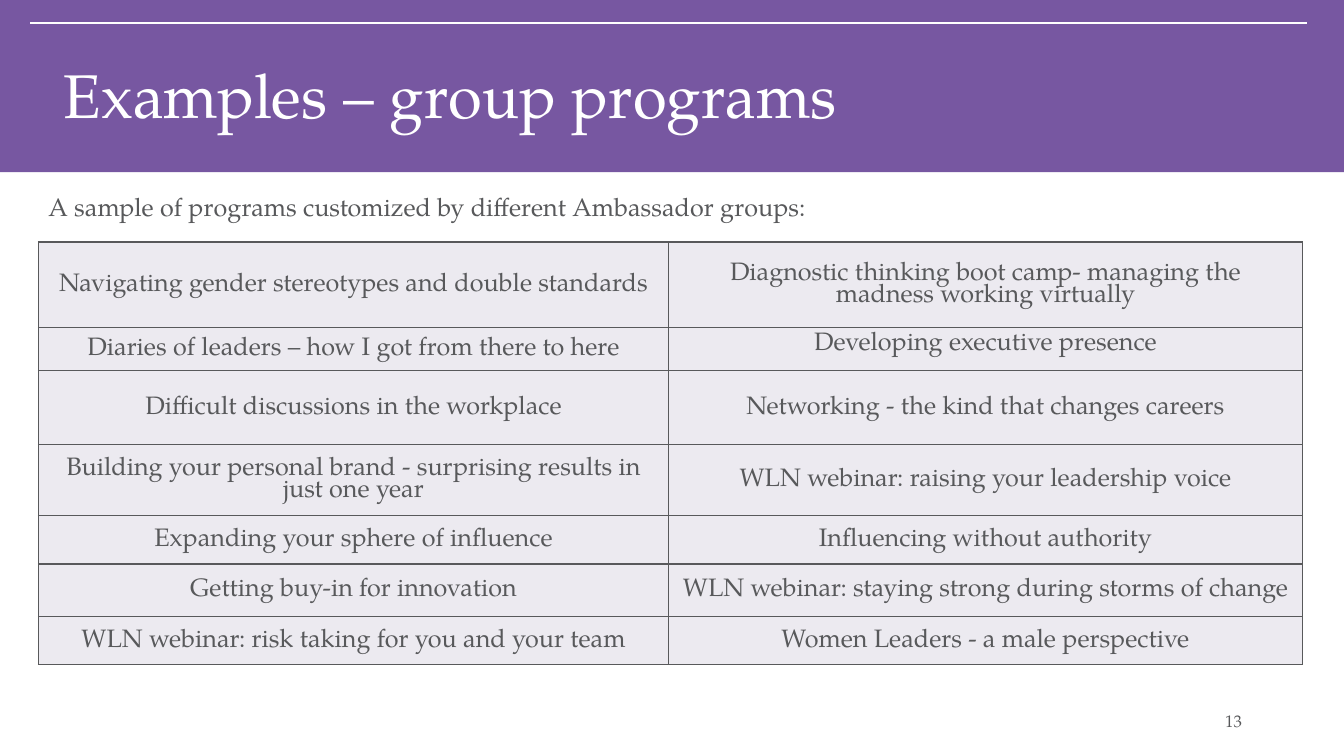
from lxml.etree import SubElement
from pptx import Presentation
from pptx.dml.color import RGBColor
from pptx.enum.shapes import MSO_CONNECTOR as Conn, MSO_SHAPE as Shape
from pptx.enum.text import MSO_ANCHOR as Anchor, PP_ALIGN as Align
from pptx.oxml.ns import qn
from pptx.util import Cm, Pt

FONT = "TeX Gyre Pagella"
PURPLE, WHITE, GRAY, PALE = "7757A1", "FFFFFF", "58595B", "ECEAF0"
COLS = [15.88, 15.97]
ROWS = [2.16, 1.07, 1.88, 1.78, 1.22, 1.32, 1.22]
TOPICS = [
    ("Navigating gender stereotypes and double standards",
     "Diagnostic thinking boot camp- managing the madness working virtually"),
    ("Diaries of leaders – how I got from there to here",
     "Developing executive presence"),
    ("Difficult discussions in the workplace",
     "Networking - the kind that changes careers"),
    ("Building your personal brand - surprising results in just one year",
     "WLN webinar: raising your leadership voice"),
    ("Expanding your sphere of influence", "Influencing without authority"),
    ("Getting buy-in for innovation",
     "WLN webinar: staying strong during storms of change"),
    ("WLN webinar: risk taking for you and your team",
     "Women Leaders - a male perspective"),
]


def rgb(code):
    return RGBColor.from_string(code)


def write(frame, text, size, color=GRAY, align=Align.LEFT):
    frame.text = text
    frame.word_wrap = True
    para = frame.paragraphs[0]
    para.alignment = align
    font = para.font
    font.name, font.size, font.color.rgb = FONT, Pt(size), rgb(color)
    return para


def place(shape, left, top, width, height):
    shape.left, shape.top = Cm(left), Cm(top)
    shape.width, shape.height = Cm(width), Cm(height)


def add_band(shapes):
    band = shapes.add_shape(Shape.RECTANGLE, 0, 0, Cm(33.87), Cm(4.34))
    band.shadow.inherit = False
    band.fill.solid()
    band.fill.fore_color.rgb = rgb(PURPLE)
    band.line.fill.background()
    rule = shapes.add_connector(
        Conn.STRAIGHT, Cm(0.76), Cm(0.58), Cm(32.94), Cm(0.58))
    rule.line.color.rgb = rgb(WHITE)
    rule.line.width = Pt(1.5)
    SubElement(rule.element.spPr, qn("a:effectLst"))
    # The title stays in front of the band.
    for part in (rule, band):
        shapes.element.insert(2, part.element)


def add_title(shapes, text):
    title = shapes.title
    place(title, 1.35, 0.28, 30.2, 3.12)
    write(title.text_frame, text, 44, WHITE)
    title.text_frame.vertical_anchor = Anchor.BOTTOM
    title.text_frame.margin_bottom = Cm(0.1)


def add_text(shapes, text, spot, size, align=Align.LEFT, anchor=Anchor.TOP):
    box = shapes.add_textbox(*map(Cm, spot))
    write(box.text_frame, text, size, align=align)
    box.text_frame.vertical_anchor = anchor


def add_border(cell):
    props = cell._tc.get_or_add_tcPr()
    for at, side in enumerate(("a:lnL", "a:lnR", "a:lnT", "a:lnB")):
        line = props.makeelement(qn(side), {"w": str(Pt(1))})
        fill = SubElement(line, qn("a:solidFill"))
        SubElement(fill, qn("a:srgbClr"), val=GRAY)
        props.insert(at, line)


def add_grid(shapes):
    table = shapes.add_table(
        len(ROWS), len(COLS), Cm(0.97), Cm(6.1),
        Cm(sum(COLS)), Cm(sum(ROWS))).table
    table.first_row = table.horz_banding = False
    for col, width in zip(table.columns, COLS):
        col.width = Cm(width)
    for row, height, topics in zip(table.rows, ROWS, TOPICS):
        row.height = Cm(height)
        for cell, topic in zip(row.cells, topics):
            para = write(cell.text_frame, topic, 18, align=Align.CENTER)
            para.line_spacing = 0.85
            cell.vertical_anchor = Anchor.MIDDLE
            cell.fill.solid()
            cell.fill.fore_color.rgb = rgb(PALE)
            add_border(cell)
    table.cell(1, 1).vertical_anchor = Anchor.TOP


def main():
    deck = Presentation()
    deck.slide_width, deck.slide_height = Cm(33.87), Cm(19.05)
    shapes = deck.slides.add_slide(deck.slide_layouts[5]).shapes
    add_band(shapes)
    add_title(shapes, "Examples – group programs")
    add_text(shapes, "13", (23.93, 17.65, 7.62, 1.02), 12,
             Align.RIGHT, Anchor.MIDDLE)
    add_grid(shapes)
    add_text(shapes,
             "A sample of programs customized by different Ambassador groups:",
             (0.97, 4.7, 29.41, 1.02), 18)
    deck.save("out.pptx")


if __name__ == "__main__":
    main()
